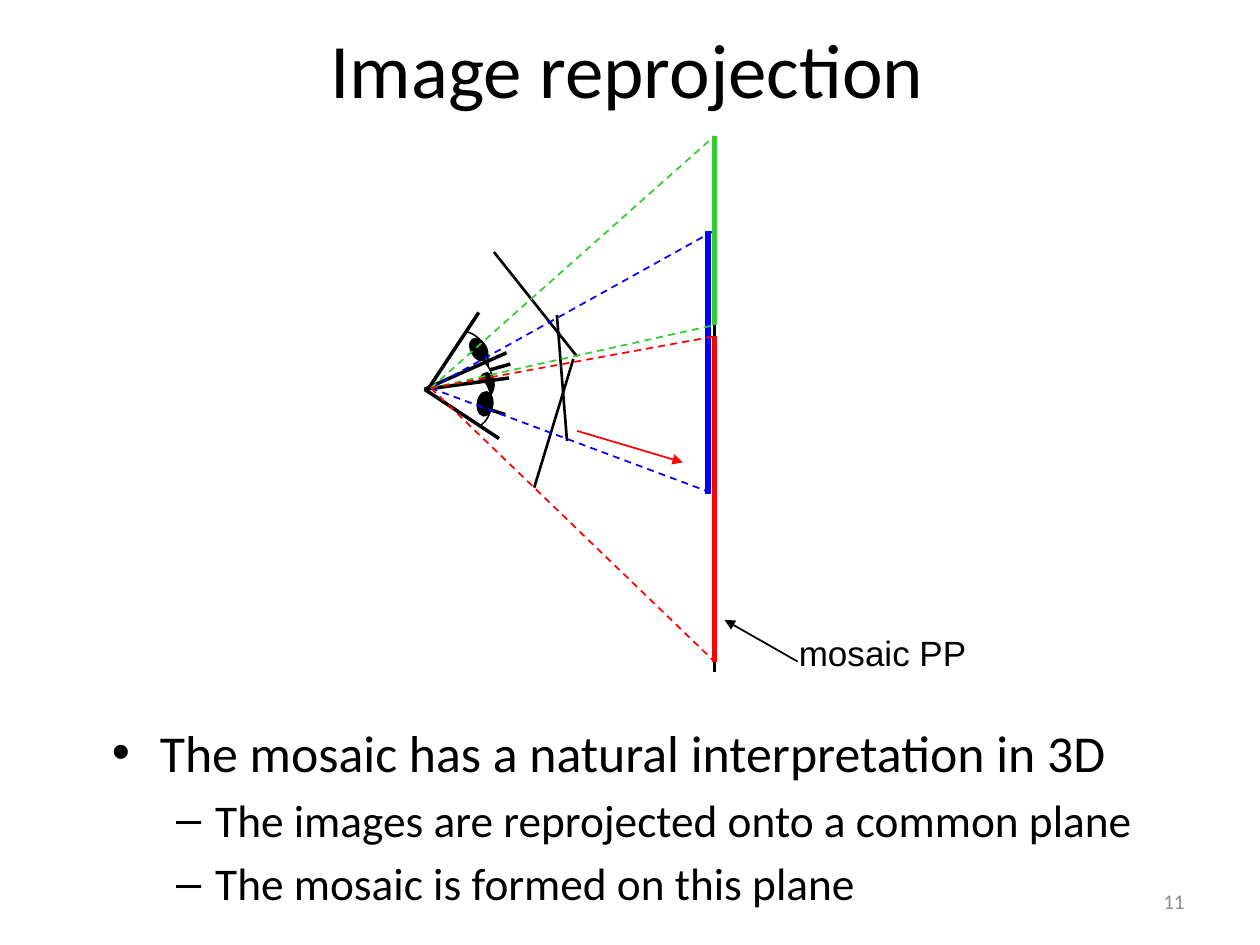
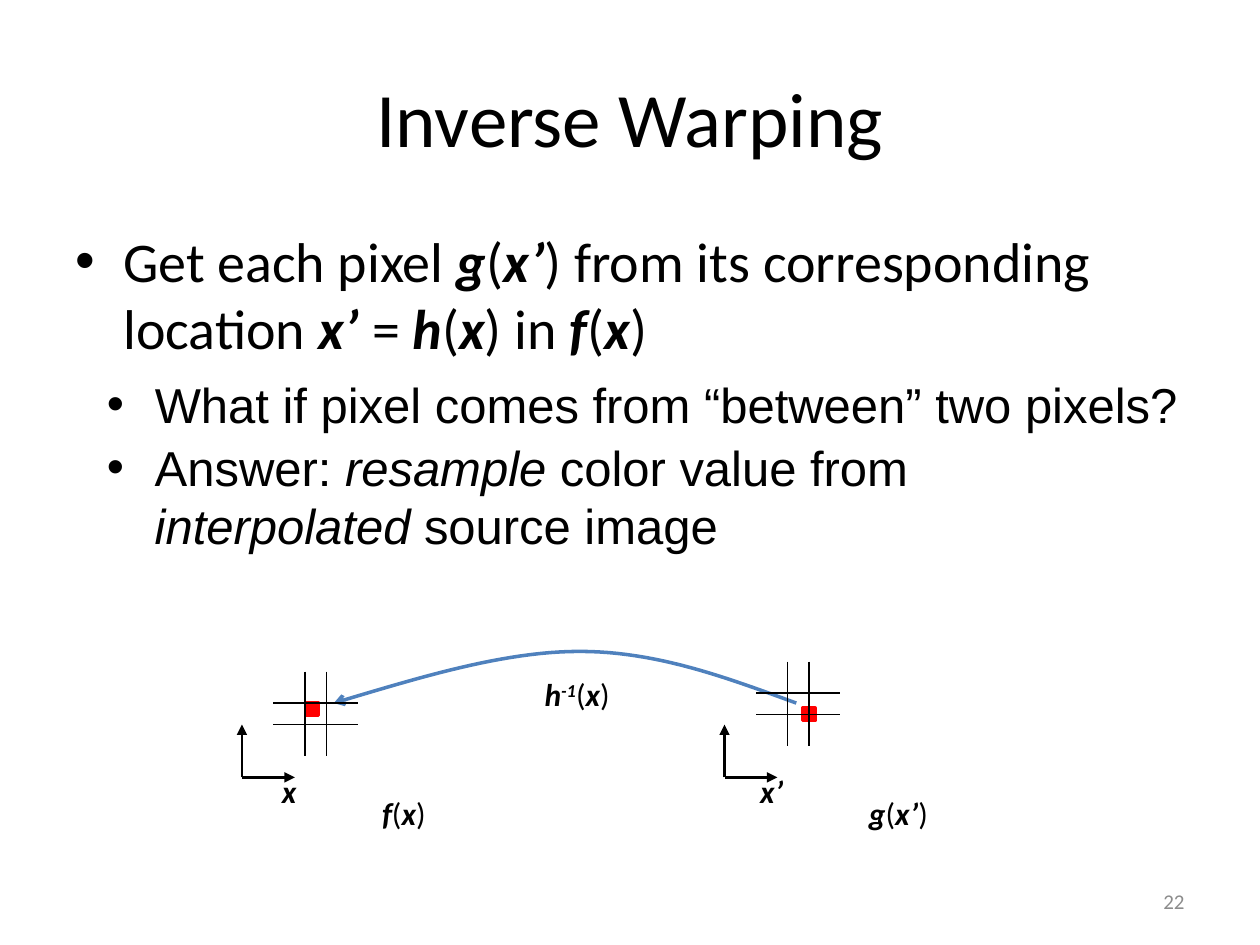
import dataclasses

import lxml.etree
import pptx
import pptx.dml.color
import pptx.enum.dml
import pptx.enum.shapes
import pptx.enum.text
import pptx.oxml.ns
import pptx.util

Inches = pptx.util.Inches
Pt = pptx.util.Pt
SHAPES = pptx.enum.shapes.MSO_SHAPE
ALIGN = pptx.enum.text.PP_ALIGN
ANCHOR = pptx.enum.text.MSO_ANCHOR

BLACK, WHITE, GREY = "000000", "FFFFFF", "8C8C8C"
RED, GREEN, BLUE, STEEL = "FF0000", "33CC33", "0000FF", "4F81BD"
BODY_FONT, LABEL_FONT = "Calibri", "Arial"


def colour(value):
    return pptx.dml.color.RGBColor.from_string(value)


def add_xml(parent, tag, **attributes):
    return lxml.etree.SubElement(parent, pptx.oxml.ns.qn(tag), attributes)


def style_line(shape, line_colour, width, dashed=False, head=None, tail=None):
    shape.line.color.rgb = colour(line_colour)
    shape.line.width = Pt(width)
    if dashed:
        shape.line.dash_style = pptx.enum.dml.MSO_LINE.DASH
    outline = shape._element.spPr.find(pptx.oxml.ns.qn("a:ln"))
    for tag, kind in (("a:headEnd", head), ("a:tailEnd", tail)):
        if kind:
            add_xml(outline, tag, type=kind)


def style_shape(shape, fill=None, line=None, width=1, head=None):
    shape.shadow.inherit = False
    if fill:
        shape.fill.solid()
        shape.fill.fore_color.rgb = colour(fill)
    else:
        shape.fill.background()
    if line:
        style_line(shape, line, width, head=head)
    else:
        shape.line.fill.background()


def bezier(start, control_1, control_2, end, steps=24):
    """Points along a cubic curve."""
    points = []
    for step in range(steps + 1):
        t = step / steps
        weights = ((1 - t) ** 3, 3 * t * (1 - t) ** 2, 3 * t * t * (1 - t), t ** 3)
        corners = (start, control_1, control_2, end)
        points.append(tuple(sum(w * corner[axis] for w, corner in zip(weights, corners))
                            for axis in (0, 1)))
    return points


@dataclasses.dataclass
class Box:
    """A region of a slide; its parts are placed from its top left corner."""
    slide: object
    left: float = 0
    top: float = 0

    def place(self, point):
        return Inches(self.left + point[0]), Inches(self.top + point[1])

    def line(self, start, end, line_colour=BLACK, width=1.5, **options):
        connector = self.slide.shapes.add_connector(
            pptx.enum.shapes.MSO_CONNECTOR.STRAIGHT, *self.place(start), *self.place(end))
        style_line(connector, line_colour, width, **options)
        add_xml(connector._element.spPr, "a:effectLst")

    def shape(self, kind, corner, size, **style):
        shape = self.slide.shapes.add_shape(kind, *self.place(corner), *map(Inches, size))
        style_shape(shape, **style)
        return shape

    def outline(self, points, close=False, **style):
        start, *others = [self.place(point) for point in points]
        builder = self.slide.shapes.build_freeform(*start)
        builder.add_line_segments(others, close=close)
        style_shape(builder.convert_to_shape(), **style)

    def text(self, corner, width, height, markup, size, font=BODY_FONT, text_colour=BLACK,
             align=ALIGN.LEFT, anchor=ANCHOR.TOP, insets=(0.1, 0.05, 0.1, 0.05),
             wrap=True, bold=True):
        text_box = self.slide.shapes.add_textbox(
            *self.place(corner), Inches(width), Inches(height))
        frame = text_box.text_frame
        frame.word_wrap = wrap
        frame.vertical_anchor = anchor
        (frame.margin_left, frame.margin_top,
         frame.margin_right, frame.margin_bottom) = map(Inches, insets)
        paragraph = frame.paragraphs[0]
        paragraph.alignment = align
        write_runs(paragraph, markup, size, font, text_colour, bold)
        return frame


def write_runs(paragraph, markup, size, font=BODY_FONT, text_colour=BLACK, bold=True):
    """Text between bars is italic, and bold too unless bold is off."""
    for index, piece in enumerate(markup.split("|")):
        if not piece:
            continue
        run = paragraph.add_run()
        run.text = piece
        run.font.size = Pt(size)
        run.font.name = font
        run.font.color.rgb = colour(text_colour)
        run.font.italic = index % 2 == 1
        run.font.bold = index % 2 == 1 and bold


def add_bullet(paragraph, character, margin, hanging):
    properties = paragraph._p.get_or_add_pPr()
    properties.set("marL", str(Inches(margin)))
    properties.set("indent", str(-Inches(hanging)))
    add_xml(properties, "a:buFont", typeface="Arial")
    add_xml(properties, "a:buChar", char=character)


# Parts shared by the slides
def add_slide(presentation, title, number, title_box, insets):
    slide = presentation.slides.add_slide(presentation.slide_layouts[6])
    page = Box(slide)
    left, top, width, height = title_box
    page.text((left, top), width, height, title, 44, align=ALIGN.CENTER,
              anchor=ANCHOR.MIDDLE, insets=insets)
    page.text((7.17, 6.95), 2.33, 0.4, number, 12, text_colour=GREY,
              align=ALIGN.RIGHT, anchor=ANCHOR.MIDDLE)
    return slide


# Slide 1: eyes, image planes and the mosaic plane
def draw_eye(box, apex, lids, arc, pupil, turn, image_plane):
    curve = bezier(*arc)
    box.outline(curve, line=BLACK, width=2)
    box.outline([apex] + curve, close=True, fill=WHITE)
    box.line(apex, lids[0], width=2)
    ellipse = box.shape(SHAPES.OVAL, pupil, (0.12, 0.19), fill=BLACK, line=BLACK)
    ellipse.rotation = turn
    box.line(apex, lids[1], width=2)
    box.line(*image_plane)


def draw_view(box, view_colour, top, bottom, plane_x, bar_x):
    for y in (top, bottom):
        box.line((0.12, 2.08), (plane_x, y), view_colour, 1, dashed=True)
    box.line((bar_x, top), (bar_x, bottom), view_colour, 3)


def draw_reprojection(box):
    plane_x = 2.37
    box.line((plane_x, 0.08), (plane_x, 4.33))
    box.text((3, 4.01), 1.5, 0.42, "mosaic PP", 20, LABEL_FONT,
             insets=(0.04, 0, 0.04, 0), wrap=False)
    box.line((3.03, 4.25), (2.45, 3.92), width=1, tail="triangle")

    draw_eye(box, (0.11, 2.07), ((0.5, 1.48), (0.75, 1.89)),
             ((0.4, 1.64), (0.52, 1.67), (0.59, 1.8), (0.56, 1.94)),
             (0.44, 1.68), 330, ((0.62, 1), (1.28, 1.83)))
    draw_eye(box, (0.07, 2.09), ((0.72, 1.8), (0.71, 2.29)),
             ((0.55, 1.89), (0.63, 1.98), (0.62, 2.13), (0.52, 2.23)),
             (0.5, 1.96), 3, ((1.12, 1.5), (1.2, 2.5)))
    draw_eye(box, (0.07, 2.09), ((0.66, 2.48), (0.74, 2)),
             ((0.51, 2.37), (0.61, 2.3), (0.62, 2.14), (0.54, 2.03)),
             (0.49, 2.11), 187, ((0.94, 2.87), (1.25, 1.85)))

    draw_view(box, BLUE, 0.83, 2.92, plane_x, plane_x - 0.05)
    draw_view(box, GREEN, 0.08, 1.58, plane_x, plane_x)
    draw_view(box, RED, 1.67, 4.25, plane_x, plane_x)
    box.line((1.28, 2.42), (2.12, 2.67), RED, 1, tail="triangle")


def build_reprojection_slide(presentation):
    insets = (0.1, 0.05, 0.14, 0.05)
    slide = add_slide(presentation, "Image reprojection", "11", (0.75, 0, 8.5, 1.08), insets)
    frame = Box(slide, 0.75, 5.67).text(
        (0, 0), 8.5, 1.83, "The mosaic has a natural interpretation in 3D", 29.6, insets=insets)
    add_bullet(frame.paragraphs[0], "•", 0.42, 0.38)
    for point in ("The images are reprojected onto a common plane",
                  "The mosaic is formed on this plane"):
        paragraph = frame.add_paragraph()
        paragraph.level = 1
        paragraph.space_before = Pt(5.2)
        write_runs(paragraph, point, 25.9)
        add_bullet(paragraph, "–", 0.86, 0.31)
    draw_reprojection(Box(slide, 3.3, 1))


# Slide 2: two pixel grids joined by the inverse map
def draw_axes(box, axis_label, function, function_left, function_width):
    origin = (0, 0.42)
    for end in ((0, 0), (0.42, 0.42)):
        box.line(origin, end, tail="triangle")
    box.text((0, 0.33), 0.75, 0.5, axis_label, 18, align=ALIGN.CENTER)
    box.text((function_left, 0.5), function_width, 0.5, function, 18, align=ALIGN.CENTER)


def draw_grid(box):
    for offset in (0.25, 0.42):
        box.line((offset, 0), (offset, 0.67), width=0.75)
        box.line((0, offset), (0.67, offset), width=0.75)


def draw_warp(box):
    axes_top = box.top + 0.58
    draw_axes(Box(box.slide, box.left, axes_top), "|x|", "|f|(|x|)", 0.91, 0.75)
    draw_axes(Box(box.slide, box.left + 3.83, axes_top), "|x’|", "|g|(|x’|)", 0.92, 0.92)
    for corner in ((0.51, 0.41), (4.45, 0.45)):
        box.shape(SHAPES.RECTANGLE, corner, (0.1, 0.1), fill=RED, line=RED, width=2)
    left_half = bezier((0.73, 0.41), (1.4, 0.21), (2.07, 0), (2.68, 0))
    right_half = bezier((2.68, 0), (3.3, 0), (3.85, 0.21), (4.4, 0.41))
    box.outline(left_half + right_half[1:], line=STEEL, width=2, head="arrow")
    for left, top in ((0.25, 0.16), (4.08, 0.08)):
        draw_grid(Box(box.slide, box.left + left, box.top + top))
    frame = box.text((2.2, 0.14), 0.92, 0.4, "|h||-1|(|x|)", 18, align=ALIGN.CENTER)
    exponent = frame.paragraphs[0].runs[1]
    exponent.font._element.set("baseline", "30000")


def build_warping_slide(presentation):
    slide = add_slide(presentation, "Inverse Warping", "22", (0.5, 0.3, 9, 1.25),
                      (0.1, 0.05, 0.1, 0.05))
    page = Box(slide, 0.5, 1.75)
    frames = [
        page.text((0, 0), 9, 4.95, "Get each pixel |g|(|x’|) from its corresponding location "
                  "|x’ |= |h|(|x|) in |f|(|x|)", 32),
        page.text((0.25, 1.17), 8.75, 1, "What if pixel comes from “between” two pixels?",
                  28, LABEL_FONT),
        page.text((0.25, 1.67), 8.5, 1, "Answer: |resample| color value from "
                  "|interpolated |source image", 28, LABEL_FONT, bold=False),
    ]
    for frame in frames:
        add_bullet(frame.paragraphs[0], "•", 0.38, 0.38)
    draw_warp(Box(slide, 1.92, 5.17))


def main():
    presentation = pptx.Presentation()
    presentation.slide_width = Inches(10)
    presentation.slide_height = Inches(7.5)
    build_reprojection_slide(presentation)
    build_warping_slide(presentation)
    presentation.save("out.pptx")


if __name__ == "__main__":
    main()
